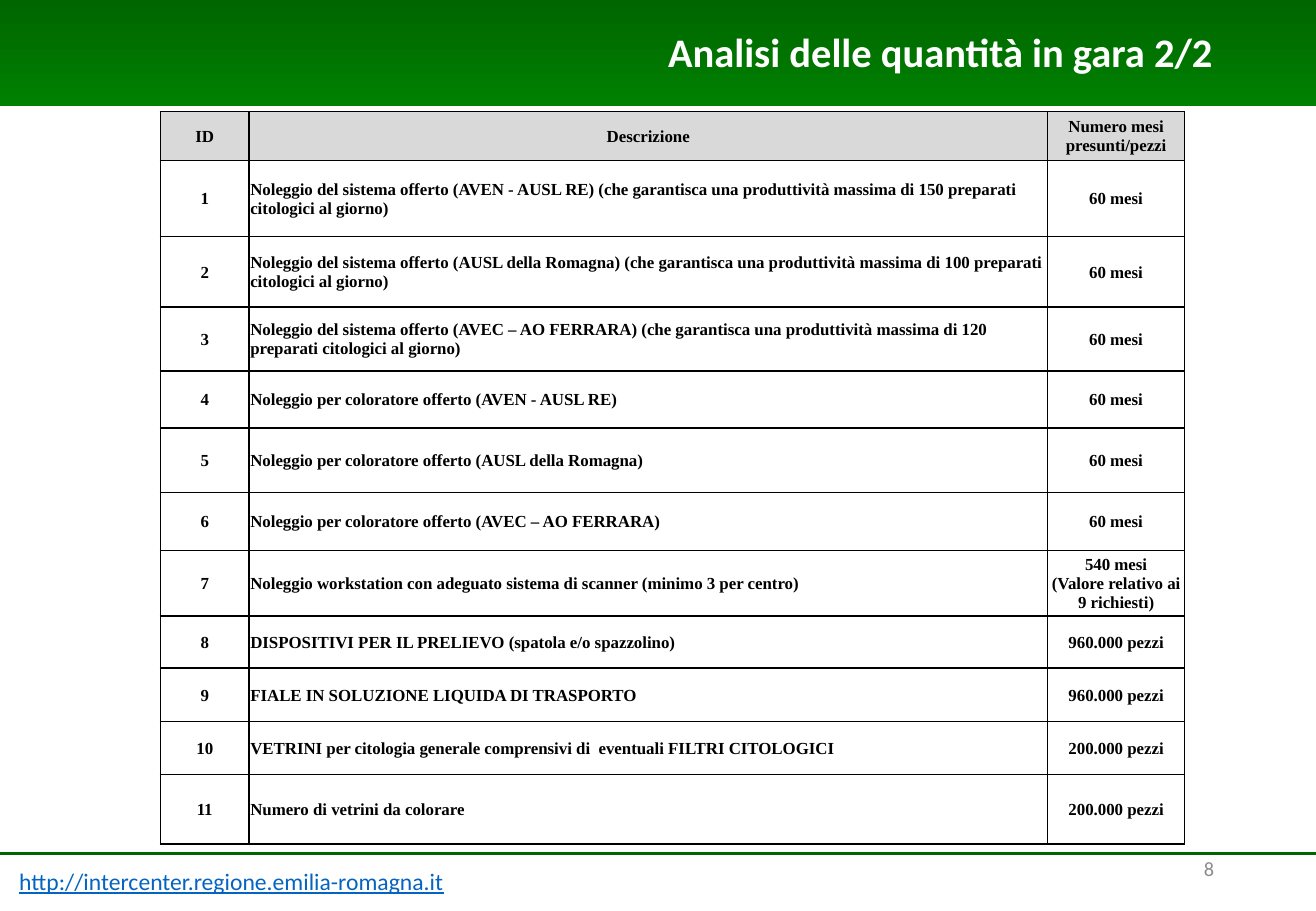
from pptx import Presentation
from pptx.dml.color import RGBColor
from pptx.enum.shapes import MSO_CONNECTOR, MSO_SHAPE
from pptx.enum.text import MSO_ANCHOR as ANCHOR, PP_ALIGN as ALIGN
from pptx.oxml import parse_xml
from pptx.oxml.ns import nsdecls
from pptx.util import Inches, Pt

DARK_GREEN = RGBColor(0x00, 0x66, 0x00)
GREEN = RGBColor(0x00, 0x80, 0x00)
WHITE = RGBColor(0xFF, 0xFF, 0xFF)
BLACK = RGBColor(0x00, 0x00, 0x00)
HEADER_GRAY = RGBColor(0xD9, 0xD9, 0xD9)
PAGE_GRAY = RGBColor(0x8C, 0x8C, 0x8C)
LINK_BLUE = RGBColor(0x05, 0x63, 0xC1)

COLS, ROWS = 1083, 750
SLIDE_W, SLIDE_H = Inches(10.83), Inches(7.5)

HEADER = ("ID", "Descrizione", "Numero mesi presunti/pezzi")
SYSTEM = "Noleggio del sistema offerto ({}) (che garantisca una produttività massima di {} preparati citologici al giorno)"
STAINER = "Noleggio per coloratore offerto ({})"
CENTRES = (("AVEN - AUSL RE", 150), ("AUSL della Romagna", 100), ("AVEC – AO FERRARA", 120))
ITEMS = [(SYSTEM.format(*centre), "60 mesi") for centre in CENTRES]
ITEMS += [(STAINER.format(name), "60 mesi") for name, _ in CENTRES]
ITEMS += [
    ("Noleggio workstation con adeguato sistema di scanner (minimo 3 per centro)",
     "540 mesi\n(Valore relativo ai 9 richiesti)"),
    ("DISPOSITIVI PER IL PRELIEVO (spatola e/o spazzolino)", "960.000 pezzi"),
    ("FIALE IN SOLUZIONE LIQUIDA DI TRASPORTO", "960.000 pezzi"),
    ("VETRINI per citologia generale comprensivi di  eventuali FILTRI CITOLOGICI", "200.000 pezzi"),
    ("Numero di vetrini da colorare", "200.000 pezzi"),
]
COLUMN_SPANS = (73, 657, 113)
ROW_SPANS = (40, 63, 58, 53, 47, 53, 48, 54, 43, 44, 44, 57)


def across(n):
    return round(SLIDE_W * n / COLS)


def down(n):
    return round(SLIDE_H * n / ROWS)


def place(box):
    x, y, w, h = box
    return across(x), down(y), across(w), down(h)


def write(p, text, size, color, font="Calibri", bold=False, align=ALIGN.LEFT):
    p.alignment = align
    r = p.add_run()
    r.text = text
    r.font.name = font
    r.font.size = Pt(size)
    r.font.bold = bold
    r.font.color.rgb = color
    return r


def add_text(s, box, text, size, color, anchor=ANCHOR.MIDDLE, **style):
    tf = s.shapes.add_textbox(*place(box)).text_frame
    tf.word_wrap = True
    tf.vertical_anchor = anchor
    return write(tf.paragraphs[0], text, size, color, **style)


def add_banner(s, box):
    x, y, w, h = box
    sp = s.shapes.add_shape(MSO_SHAPE.RECTANGLE, *place(box))
    sp.shadow.inherit = False
    sp.line.fill.background()
    sp.fill.gradient()
    sp.fill.gradient_angle = 270
    for stop, position, color in zip(sp.fill.gradient_stops, (0, 1), (DARK_GREEN, GREEN)):
        stop.position = position
        stop.color.rgb = color
    title = (x + 74, y + 15, w - 149, h - 27)
    add_text(s, title, "Analisi delle quantità in gara 2/2", 24, WHITE, bold=True, align=ALIGN.RIGHT)
    s.shapes[-1].text_frame.paragraphs[0].line_spacing = 0.9


def add_borders(cell):
    tcPr = cell._tc.get_or_add_tcPr()
    for i, side in enumerate(("lnL", "lnR", "lnT", "lnB")):
        tcPr.insert(i, parse_xml(
            f'<a:{side} {nsdecls("a")} w="{Pt(1)}"><a:solidFill>'
            f'<a:srgbClr val="{BLACK}"/></a:solidFill></a:{side}>'))


def fill_cell(cell, text, is_header, align):
    cell.vertical_anchor = ANCHOR.MIDDLE
    cell.margin_left = cell.margin_right = across(1)
    cell.margin_top, cell.margin_bottom = down(1), 0
    if is_header:
        cell.fill.solid()
        cell.fill.fore_color.rgb = HEADER_GRAY
    else:
        cell.fill.background()
    tf = cell.text_frame
    for i, line in enumerate(text.split("\n")):
        p = tf.add_paragraph() if i else tf.paragraphs[0]
        write(p, line, 10, BLACK, "Times New Roman", True, align)
    add_borders(cell)


def add_quantities(s, box):
    rows = [HEADER] + [(str(i), *item) for i, item in enumerate(ITEMS, 1)]
    table = s.shapes.add_table(len(rows), len(HEADER), *place(box)).table
    table.horz_banding = False
    for column, span in zip(table.columns, COLUMN_SPANS):
        column.width = across(box[2] * span / sum(COLUMN_SPANS))
    for row, span in zip(table.rows, ROW_SPANS):
        row.height = down(box[3] * span / sum(ROW_SPANS))
    for i, row in enumerate(rows):
        for j, text in enumerate(row):
            align = ALIGN.LEFT if i and j == 1 else ALIGN.CENTER
            fill_cell(table.cell(i, j), text, i == 0, align)


def add_footer(s, box):
    x, y, w, h = box
    line = s.shapes.add_connector(
        MSO_CONNECTOR.STRAIGHT, across(x), down(y), across(x + w), down(y))
    line.line.color.rgb = DARK_GREEN
    line.line.width = Pt(1.75)
    line._element.spPr.append(parse_xml(f'<a:effectLst {nsdecls("a")}/>'))
    r = add_text(s, (x + 6, y + 6, 481, 34), "http://intercenter.regione.emilia-romagna.it",
                 14, LINK_BLUE, anchor=ANCHOR.TOP)
    r.font.underline = True
    add_text(s, (x + w - 318, y - 8, 244, 40), "8", 12, PAGE_GRAY, align=ALIGN.RIGHT)


def main():
    prs = Presentation()
    prs.slide_width, prs.slide_height = SLIDE_W, SLIDE_H
    s = prs.slides.add_slide(prs.slide_layouts[6])
    s.background.fill.solid()
    s.background.fill.fore_color.rgb = WHITE
    add_banner(s, (0, 0, COLS, 87))
    add_quantities(s, (132, 92, 843, 603))
    add_footer(s, (0, 703, COLS, 47))
    prs.save("out.pptx")


if __name__ == "__main__":
    main()
